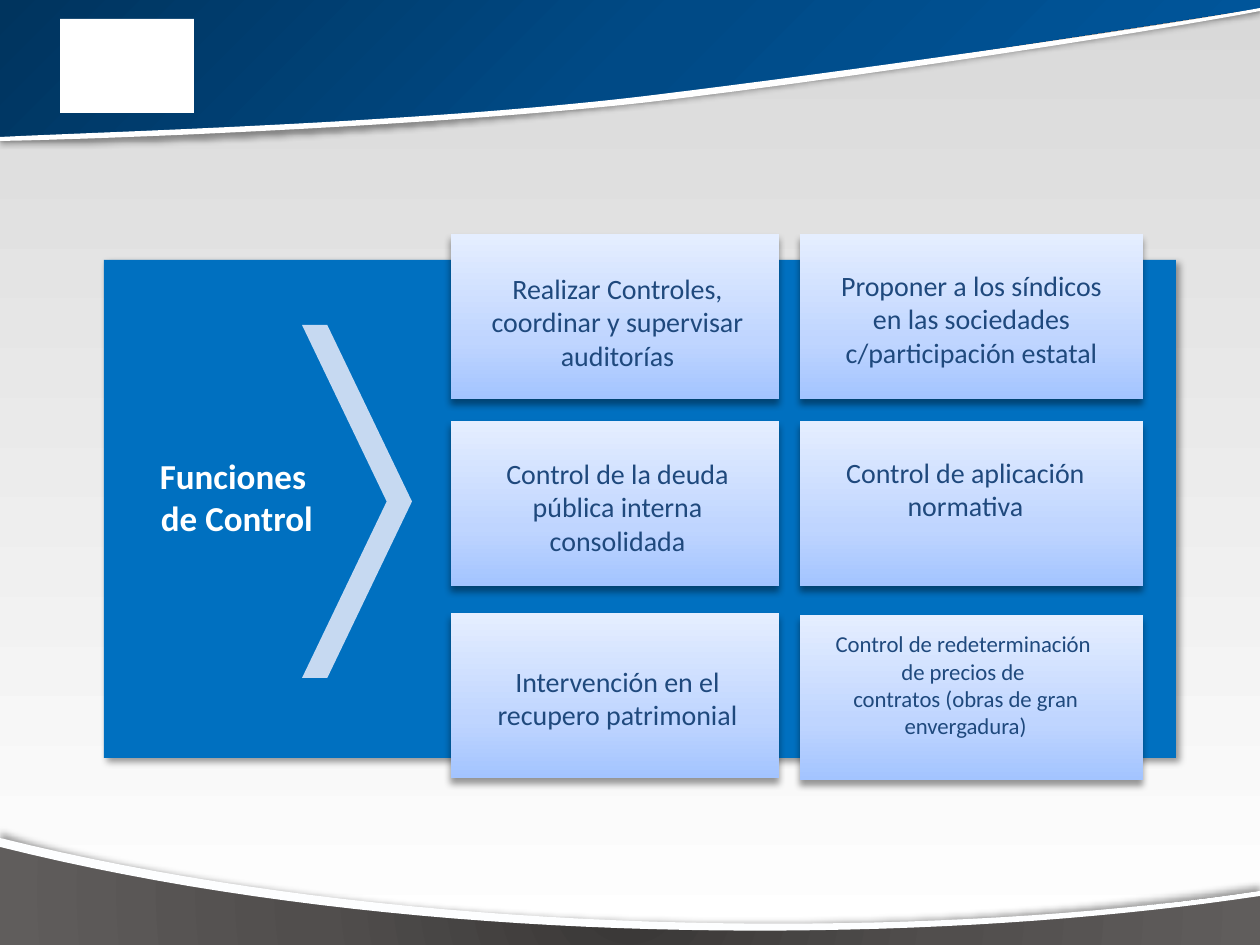
"""Build the slide on control functions: six cards beside a titled chevron panel."""
import pptx
import pptx.util
import pptx.dml.color
import pptx.enum.shapes
import pptx.enum.text
import pptx.oxml
import pptx.oxml.ns

PX = 914400 / 126
W, H = 1260, 945
KIND = pptx.enum.shapes.MSO_SHAPE
THEME = {
    "font": "Calibri",
    "title_size": 20, "card_size": 16, "small_size": 13,
    "white": "FFFFFF", "stripe": "FDFEFF", "panel": "0070C0",
    "chevron": "C6D9F1", "ink": "1F497D", "shadow": "000000",
    "page": [(0, "D9D9D9"), (100, "FFFFFF")],
    "header": [(0, "00345E"), (50, "004A86"), (100, "00589F")],
    "footer": [(0, "393736"), (50, "514E4D"), (100, "605D5C")],
    "card": [(0, "E5EEFF"), (65, "BFD5FF"), (100, "A3C4FF")],
}
CIRCLE = '<a:path path="circle"><a:fillToRect l="50000" t="50000" r="50000" b="50000"/></a:path>'


def paint(sp, fill, angle=90, shadow=None):
    sp.line.fill.background()
    sp.shadow.inherit = False
    ns = pptx.oxml.ns.nsdecls("a")
    spPr = sp._element.spPr
    if isinstance(fill, str):
        sp.fill.solid()
        sp.fill.fore_color.rgb = pptx.dml.color.RGBColor.from_string(fill)
    else:
        sp.fill.gradient()
        stops = "".join(f'<a:gs pos="{pos * 1000}"><a:srgbClr val="{color}"/></a:gs>' for pos, color in fill)
        shade = CIRCLE if angle is None else f'<a:lin ang="{angle * 60000}" scaled="0"/>'
        grad = pptx.oxml.parse_xml(f'<a:gradFill {ns} rotWithShape="1"><a:gsLst>{stops}</a:gsLst>{shade}</a:gradFill>')
        spPr.replace(spPr.find(pptx.oxml.ns.qn("a:gradFill")), grad)
    if shadow is not None:
        spPr.find(pptx.oxml.ns.qn("a:effectLst")).append(pptx.oxml.parse_xml(
            f'<a:outerShdw {ns} blurRad="50800" dist="38100" dir="{shadow * 60000}" algn="t" rotWithShape="0">'
            f'<a:srgbClr val="{THEME["shadow"]}"><a:alpha val="40000"/></a:srgbClr></a:outerShdw>'))


def write(shapes, box, lines, size, color, bold=False):
    tf = shapes.add_textbox(*[round(v * PX) for v in box]).text_frame
    tf.word_wrap = True
    tf.auto_size = pptx.enum.text.MSO_AUTO_SIZE.SHAPE_TO_FIT_TEXT
    for i, line in enumerate(lines):
        p = tf.add_paragraph() if i else tf.paragraphs[0]
        p.text = line
        p.alignment = pptx.enum.text.PP_ALIGN.CENTER
        p.font.name = THEME["font"]
        p.font.size = pptx.util.Pt(size)
        p.font.bold = bold
        p.font.color.rgb = pptx.dml.color.RGBColor.from_string(color)
    return tf


prs = pptx.Presentation()
prs.slide_width, prs.slide_height = round(W * PX), round(H * PX)
s = prs.slides.add_slide(prs.slide_layouts[6])

page = s.shapes.add_shape(KIND.RECTANGLE, 0, 0, prs.slide_width, prs.slide_height)
paint(page, THEME["page"])

bands = [
    ([(0, 0), (W, 0), (W, 8), (746, 88, 437, 135, 0, 137)], THEME["header"], 45, 90),
    ([(W, 8), (1176, 24, 874, 68, 662, 94), (440, 122, 126, 131, 0, 137), (0, 141),
      (111, 139, 431, 126, 641, 103), (856, 78, 1162, 30, W, 11)], THEME["white"], 90, None),
    ([(W, 891), (W, H), (0, H), (0, 838), (63, 867, 606, 988, W, 891)], THEME["footer"], None, 270),
    ([(0, 838), (396, 937, 908, 944, W, 891), (W, 896), (916, 948, 407, 949, 0, 847)],
     THEME["stripe"], 90, None),
]
STEPS = 40
for outline, fill, angle, shadow in bands:
    points = [outline[0]]
    for seg in outline[1:]:
        if len(seg) == 2:
            points.append(seg)
            continue
        x0, y0 = points[-1]
        x1, y1, x2, y2, x3, y3 = seg
        for k in range(1, STEPS + 1):
            t = k / STEPS
            a, b, c, d = (1 - t) ** 3, 3 * t * (1 - t) ** 2, 3 * t * t * (1 - t), t ** 3
            points.append((a * x0 + b * x1 + c * x2 + d * x3, a * y0 + b * y1 + c * y2 + d * y3))
    points = [(round(x * PX), round(y * PX)) for x, y in points]
    builder = s.shapes.build_freeform(*points[0], scale=1.0)
    builder.add_line_segments(points[1:], close=True)
    paint(builder.convert_to_shape(), fill, angle, shadow)

emblem = s.shapes.add_shape(KIND.RECTANGLE, *[round(v * PX) for v in (60, 19, 134, 94)])
paint(emblem, THEME["white"])

panel = s.shapes.add_shape(KIND.RECTANGLE, *[round(v * PX) for v in (104, 260, 1072, 498)])
paint(panel, THEME["panel"], shadow=45)
tf = write(s.shapes, (118, 448, 238, 97), ["Funciones ", "de Control"],
           THEME["title_size"], THEME["white"], bold=True)
tf.vertical_anchor = pptx.enum.text.MSO_ANCHOR.MIDDLE
chevron = s.shapes.add_shape(KIND.CHEVRON, *[round(v * PX) for v in (302, 325, 110, 353)])
chevron.adjustments[0] = 0.77
paint(chevron, THEME["chevron"])

columns = [(451, 328), (800, 343)]
cards = [
    (0, 234, (470, 265, 295, 115), ["Realizar Controles, coordinar y supervisar auditorías"], "card_size"),
    (1, 234, (824, 262, 295, 115), ["Proponer a los síndicos en las sociedades c/participación estatal"], "card_size"),
    (0, 421, (470, 450, 295, 115), ["Control de la deuda pública interna consolidada"], "card_size"),
    (1, 421, (813, 449, 305, 81), ["Control de aplicación normativa"], "card_size"),
    (0, 613, (470, 658, 295, 81), ["Intervención en el recupero patrimonial"], "card_size"),
    (1, 615, (818, 624, 295, 123),
     ["Control de redeterminación ", "de precios de ", "contratos (obras de gran envergadura)"], "small_size"),
]
for column, top, box, lines, size in cards:
    left, width = columns[column]
    group = s.shapes.add_group_shape()
    sp = group.shapes.add_shape(KIND.ROUNDED_RECTANGLE, *[round(v * PX) for v in (left, top, width, 165)])
    sp.adjustments[0] = 0
    paint(sp, THEME["card"], shadow=90)
    write(group.shapes, box, lines, THEME[size], THEME["ink"])

prs.save("out.pptx")
